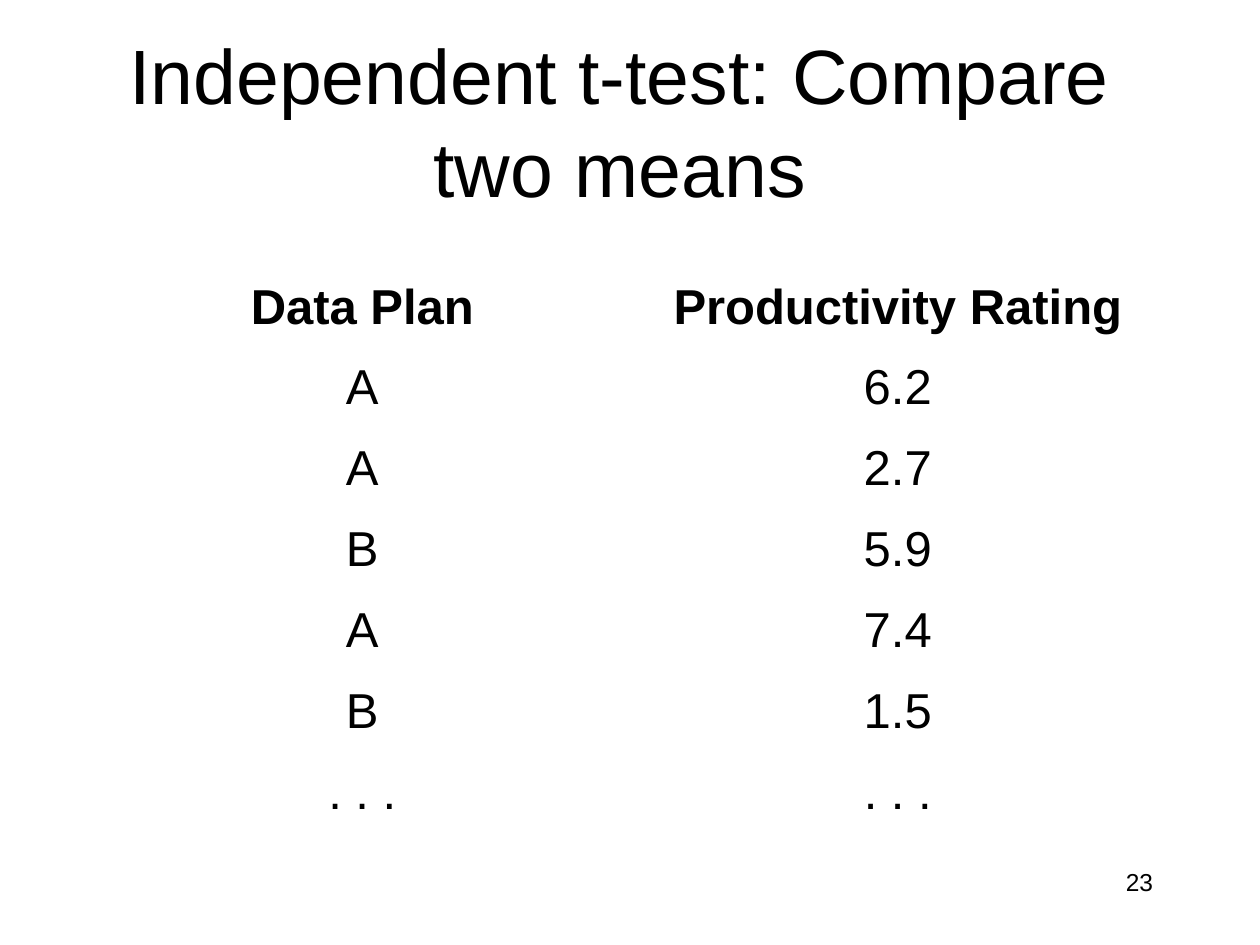
"""Build a slide with example data for an independent t-test."""
from pptx import Presentation
from pptx import util as u
from pptx.dml import color
from pptx.enum import text

BLACK = color.RGBColor(0, 0, 0)
WHITE = color.RGBColor(255, 255, 255)
ROWS = [
    ("Data Plan", "Productivity Rating"),
    ("A", "6.2"),
    ("A", "2.7"),
    ("B", "5.9"),
    ("A", "7.4"),
    ("B", "1.5"),
    (". . .", ". . ."),
]


def write(frame, content, align, **font_format):
    frame.text = content
    paragraph = frame.paragraphs[0]
    paragraph.alignment = align
    font = paragraph.runs[0].font
    font.color.rgb = BLACK
    for name, value in {"name": "Arial", "bold": False, **font_format}.items():
        setattr(font, name, value)
    return paragraph


presentation = Presentation()
presentation.slide_width = u.Inches(10)
presentation.slide_height = u.Inches(7.5)
slide = presentation.slides.add_slide(presentation.slide_layouts[5])
slide.background.fill.solid()
slide.background.fill.fore_color.rgb = WHITE

title = slide.shapes.title
title_place = {"left": 0.67, "top": 0.33, "width": 8.5, "height": 1.25}
for name, value in title_place.items():
    setattr(title, name, u.Inches(value))
title_format = {
    "word_wrap": True,
    "auto_size": text.MSO_AUTO_SIZE.NONE,
    "vertical_anchor": text.MSO_ANCHOR.MIDDLE,
}
for name, value in title_format.items():
    setattr(title.text_frame, name, value)
write(title.text_frame, "Independent t-test: Compare two means",
      text.PP_ALIGN.CENTER, size=u.Pt(44))

table = slide.shapes.add_table(
    len(ROWS), len(ROWS[0]),
    u.Inches(0.75), u.Inches(2.17), u.Inches(8.5), u.Inches(4.5),
).table
for name in ("first_row", "horz_banding"):
    setattr(table, name, False)
for row, values in enumerate(ROWS):
    for column, value in enumerate(values):
        cell = table.cell(row, column)
        cell.fill.background()
        paragraph = write(cell.text_frame, value, text.PP_ALIGN.CENTER,
                          size=u.Pt(28), bold=row == 0)
        paragraph.space_before = u.Pt(0.2 * 28)

page_number = slide.shapes.add_textbox(
    u.Inches(7.17), u.Inches(6.83), u.Inches(2.08), u.Inches(0.5))
page_number.text_frame.word_wrap = True
write(page_number.text_frame, "23", text.PP_ALIGN.RIGHT, size=u.Pt(14))

presentation.save("out.pptx")
